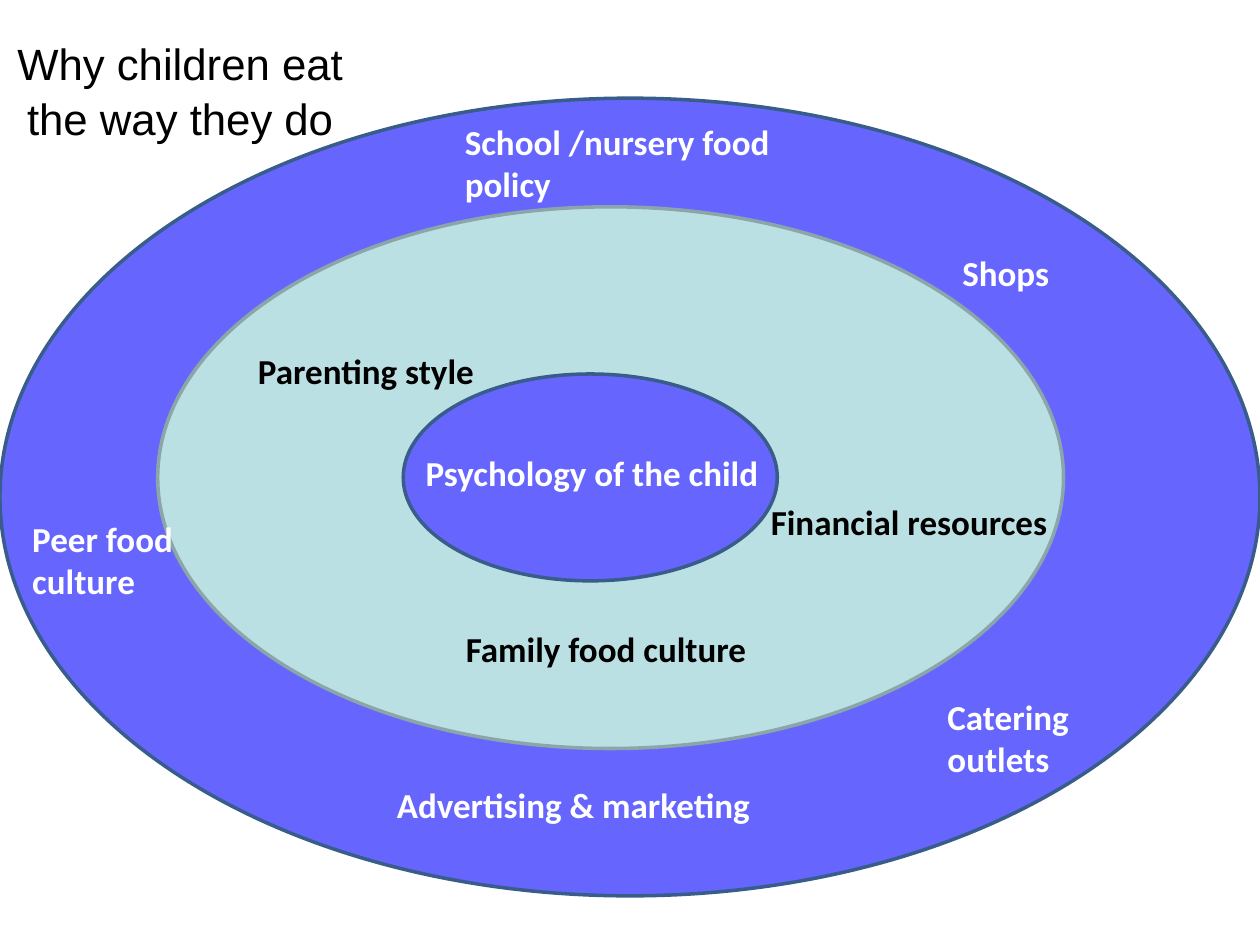
import pptx
import pptx.util
import pptx.dml.color
import pptx.enum.shapes
import pptx.enum.text

Cm, Pt = pptx.util.Cm, pptx.util.Pt
BLUE, PALE, WHITE, BLACK = "6666FF", "BBE0E3", "FFFFFF", "000000"

# left, top, width, height in cm; fill; outline
RINGS = [
    (0, 1.98, 25.4, 16.08, BLUE, "385D8A"),
    (3.18, 4.17, 18.26, 10.92, PALE, "8AA6A8"),
    (8.13, 7.54, 7.54, 4.17, BLUE, "385D8A"),
]

TITLE = "Why children eat the way they do"

ONE_LINE, TWO_LINES = 1.11, 1.96
# text, left, top, width, height in cm; colour
LABELS = [
    ("Psychology of the child", 8.33, 8.97, 7.92, ONE_LINE, WHITE),
    ("Parenting style", 4.95, 6.93, 9.93, ONE_LINE, BLACK),
    ("Family food culture", 9.14, 12.52, 7.92, ONE_LINE, BLACK),
    ("Financial resources", 15.29, 9.96, 6.55, ONE_LINE, BLACK),
    ("Advertising & marketing", 7.75, 15.67, 8.74, ONE_LINE, WHITE),
    ("School /nursery food policy", 9.12, 2.31, 7.34, TWO_LINES, WHITE),
    ("Peer food culture", 0.4, 10.31, 4.78, TWO_LINES, WHITE),
    ("Shops", 19.15, 4.95, 3.58, ONE_LINE, WHITE),
    ("Catering outlets", 18.85, 13.89, 3.58, TWO_LINES, WHITE),
]


def rgb(value):
    return pptx.dml.color.RGBColor.from_string(value)


def add_ring(s, left, top, width, height, fill, outline):
    sp = s.shapes.add_shape(pptx.enum.shapes.MSO_SHAPE.OVAL,
                            Cm(left), Cm(top), Cm(width), Cm(height))
    sp.shadow.inherit = False
    sp.fill.solid()
    sp.fill.fore_color.rgb = rgb(fill)
    sp.line.color.rgb = rgb(outline)
    sp.line.width = Pt(2)


def add_text(s, text, left, top, width, height, color,
             font="Calibri", size=20, bold=True):
    """Add a wrapping text box and return its text frame."""
    tf = s.shapes.add_textbox(Cm(left), Cm(top), Cm(width), Cm(height)).text_frame
    tf.word_wrap = True
    p = tf.paragraphs[0]
    p.text = text
    p.font.name = font
    p.font.size = Pt(size)
    p.font.bold = bold
    p.font.color.rgb = rgb(color)
    return tf


def main():
    prs = pptx.Presentation()
    prs.slide_width, prs.slide_height = Cm(25.4), Cm(19.05)
    s = prs.slides.add_slide(prs.slide_layouts[6])

    for ring in RINGS:
        add_ring(s, *ring)

    tf = add_text(s, TITLE, 0, 0, 7.26, 3.61, BLACK, "Arial", 25, False)
    tf.vertical_anchor = pptx.enum.text.MSO_ANCHOR.MIDDLE
    tf.paragraphs[0].alignment = pptx.enum.text.PP_ALIGN.CENTER
    tf.paragraphs[0].line_spacing = 1.05

    for label in LABELS:
        tf = add_text(s, *label)
        tf.auto_size = pptx.enum.text.MSO_AUTO_SIZE.SHAPE_TO_FIT_TEXT

    prs.save("out.pptx")


if __name__ == "__main__":
    main()
